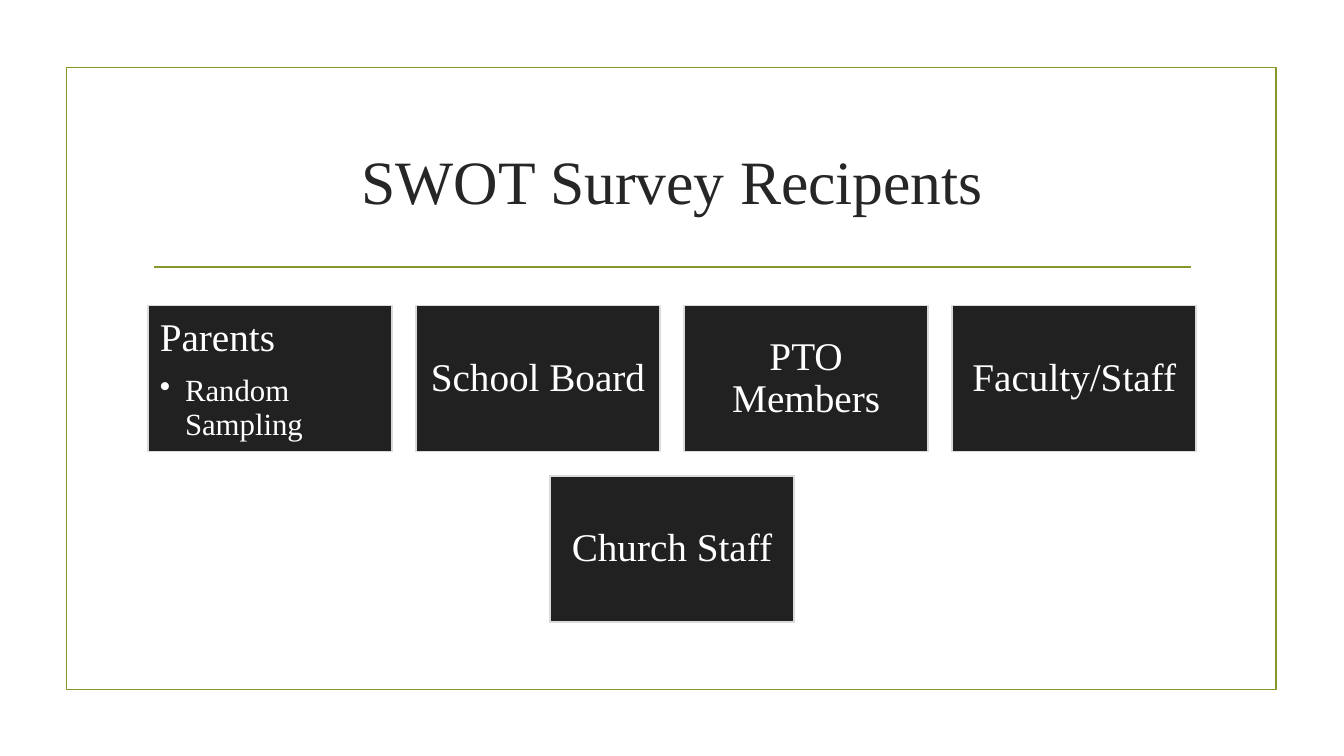
import pptx
import pptx.util
from lxml import etree
from pptx.dml.color import RGBColor
from pptx.enum.shapes import MSO_CONNECTOR, MSO_SHAPE
from pptx.enum.text import MSO_ANCHOR, PP_ALIGN
from pptx.oxml.ns import qn
from pptx.util import Inches, Pt

TITLE = "SWOT Survey Recipents"
# Each row holds (recipient group, details)
RECIPIENT_ROWS = [
    [("Parents", ["Random Sampling"]), ("School Board", []),
     ("PTO Members", []), ("Faculty/Staff", [])],
    [("Church Staff", [])],
]

FONT = "Times New Roman"
GREEN = RGBColor(0x83, 0x99, 0x2A)
TITLE_GRAY = RGBColor(0x26, 0x26, 0x26)
CARD_BLACK = RGBColor(0x21, 0x21, 0x21)
CARD_EDGE = RGBColor(0xDA, 0xDA, 0xDA)
WHITE = RGBColor(0xFF, 0xFF, 0xFF)

SLIDE_W, SLIDE_H = 13.33, 7.5
CARD_W, CARD_H, GAP = 2.42, 1.45, 0.24
CARDS_TOP = 3.03
CARD_INSET = 0.12


def add_run(paragraph, text, size, color):
    run = paragraph.add_run()
    run.text = text
    run.font.name = FONT
    run.font.size = Pt(size)
    run.font.color.rgb = color


def add_rectangle(slide, left, top, width, height, edge, fill=None):
    rectangle = slide.shapes.add_shape(
        MSO_SHAPE.RECTANGLE, Inches(left), Inches(top), Inches(width), Inches(height))
    rectangle.shadow.inherit = False
    if fill is None:
        rectangle.fill.background()
    else:
        rectangle.fill.solid()
        rectangle.fill.fore_color.rgb = fill
    rectangle.line.color.rgb = edge
    rectangle.line.width = Pt(1.25)
    return rectangle


def add_bullet(paragraph):
    properties = paragraph._p.get_or_add_pPr()
    properties.set("marL", str(Inches(0.25)))
    properties.set("indent", str(-Inches(0.25)))
    etree.SubElement(properties, qn("a:buChar")).set("char", "•")


def add_card(slide, left, top, recipient, details):
    card = add_rectangle(slide, left, top, CARD_W, CARD_H, CARD_EDGE, CARD_BLACK)
    frame = card.text_frame
    frame.word_wrap = True
    frame.margin_left = frame.margin_right = Inches(CARD_INSET)
    frame.margin_top = frame.margin_bottom = Inches(CARD_INSET)
    frame.vertical_anchor = MSO_ANCHOR.TOP if details else MSO_ANCHOR.MIDDLE

    heading = frame.paragraphs[0]
    heading.alignment = PP_ALIGN.LEFT if details else PP_ALIGN.CENTER
    heading.line_spacing = 0.9
    if details:
        heading.space_after = Pt(11)
    add_run(heading, recipient, 28, WHITE)

    for detail in details:
        item = frame.add_paragraph()
        item.alignment = PP_ALIGN.LEFT
        item.line_spacing = 0.9
        add_bullet(item)
        add_run(item, detail, 22, WHITE)


def add_title(slide):
    box = slide.shapes.add_textbox(Inches(1.42), Inches(1.07), Inches(10.5), Inches(1.43))
    frame = box.text_frame
    frame.word_wrap = True
    frame.vertical_anchor = MSO_ANCHOR.MIDDLE
    frame.paragraphs[0].alignment = PP_ALIGN.CENTER
    add_run(frame.paragraphs[0], TITLE, 44, TITLE_GRAY)


def add_divider(slide):
    divider = slide.shapes.add_connector(
        MSO_CONNECTOR.STRAIGHT, Inches(1.53), Inches(2.65), Inches(11.81), Inches(2.65))
    divider.line.color.rgb = GREEN
    divider.line.width = Pt(1.25)
    etree.SubElement(divider._element.spPr, qn("a:effectLst"))


def main():
    deck = pptx.Presentation()
    deck.slide_width, deck.slide_height = Inches(SLIDE_W), Inches(SLIDE_H)
    slide = deck.slides.add_slide(deck.slide_layouts[6])

    add_rectangle(slide, 0.66, 0.67, 12, 6.17, GREEN)
    add_divider(slide)
    add_title(slide)

    for row, recipients in enumerate(RECIPIENT_ROWS):
        row_width = len(recipients) * (CARD_W + GAP) - GAP
        row_left = (SLIDE_W - row_width) / 2
        top = CARDS_TOP + row * (CARD_H + GAP)
        for column, (recipient, details) in enumerate(recipients):
            add_card(slide, row_left + column * (CARD_W + GAP), top, recipient, details)

    deck.save("out.pptx")


if __name__ == "__main__":
    main()
